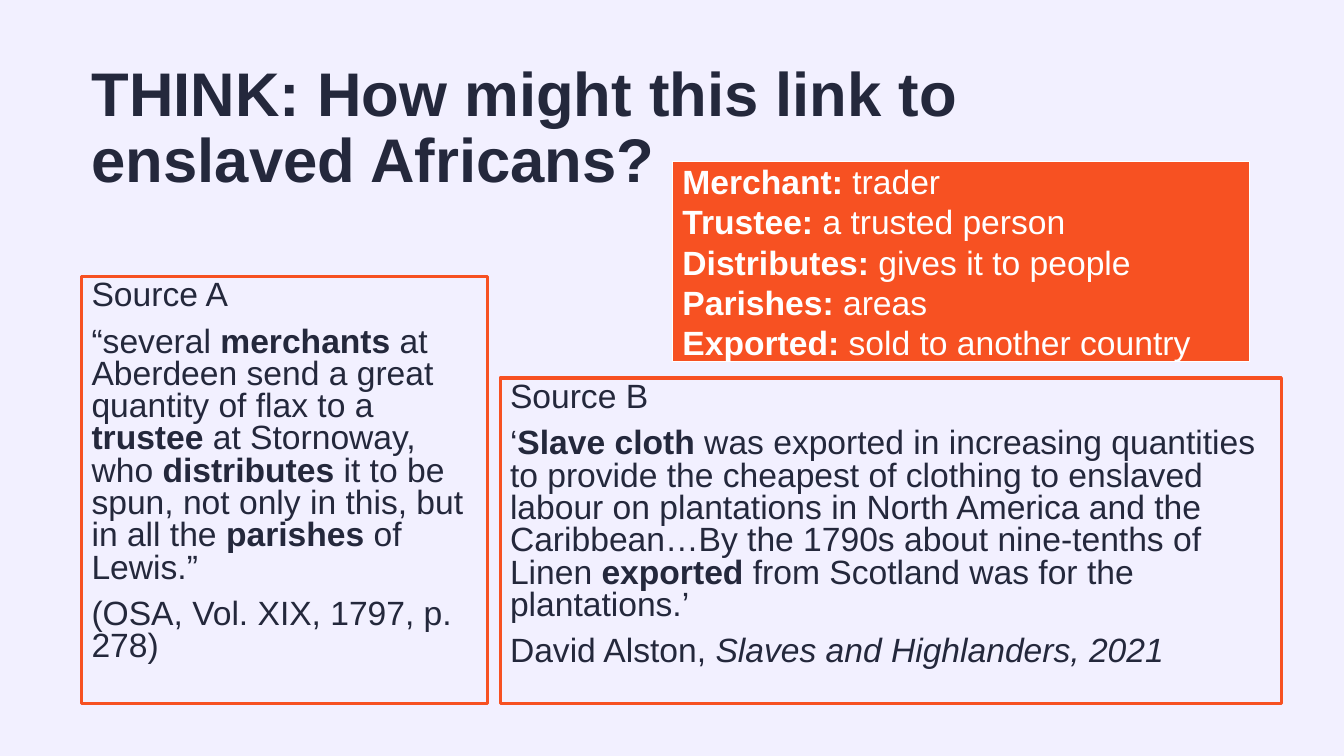
import pptx
import pptx.dml.color
import pptx.enum.shapes
import pptx.enum.text
import pptx.util
from pptx.util import Inches

RGBColor = pptx.dml.color.RGBColor
LAVENDER = RGBColor(0xF2, 0xF0, 0xFF)
NAVY = RGBColor(0x24, 0x28, 0x3C)
ORANGE = RGBColor(0xF7, 0x51, 0x22)
WHITE = RGBColor(0xFF, 0xFF, 0xFF)
MIDDLE = pptx.enum.text.MSO_ANCHOR.MIDDLE
TOP = pptx.enum.text.MSO_ANCHOR.TOP


def write(shape, paragraphs, size=24, color=NAVY, anchor=TOP, inset=0.05,
          spacing=1.0, before=0):
    """Fill a shape with paragraphs, each a list of (text, style); style is "", "b" or "i"."""
    frame = shape.text_frame
    frame.word_wrap = True
    frame.auto_size = pptx.enum.text.MSO_AUTO_SIZE.NONE
    frame.vertical_anchor = anchor
    frame.margin_left = frame.margin_right = Inches(0.1)
    frame.margin_top = frame.margin_bottom = Inches(inset)
    for index, pieces in enumerate(paragraphs):
        paragraph = frame.add_paragraph() if index else frame.paragraphs[0]
        paragraph.alignment = pptx.enum.text.PP_ALIGN.LEFT
        paragraph.line_spacing = spacing
        paragraph.space_before = pptx.util.Pt(before if index else 0)
        for text, style in pieces:
            run = paragraph.add_run()
            run.text = text
            run.font.name = "Arial"
            run.font.size = pptx.util.Pt(size)
            run.font.color.rgb = color
            run.font.bold = style == "b"
            run.font.italic = style == "i"


deck = pptx.Presentation()
deck.slide_width = Inches(13.33)
deck.slide_height = Inches(7.5)
slide = deck.slides.add_slide(deck.slide_layouts[5])
slide.background.fill.solid()
slide.background.fill.fore_color.rgb = LAVENDER

# Title
title = slide.shapes.title
title.left, title.top = Inches(0.81), Inches(0.29)
title.width, title.height = Inches(11.5), Inches(1.99)
write(title, [[("THINK: How might this link to enslaved Africans?", "b")]],
      size=44, anchor=MIDDLE, spacing=0.9)

# Sources
source_a = [
    [("Source A", "")],
    [("“several ", ""), ("merchants", "b"),
     (" at Aberdeen send a great quantity of flax to a ", ""), ("trustee", "b"),
     (" at Stornoway, who ", ""), ("distributes", "b"),
     (" it to be spun, not only in this, but in all the ", ""),
     ("parishes", "b"), (" of Lewis.”", "")],
    [("(OSA, Vol. XIX, 1797, p. 278)", "")],
]
source_b = [
    [("Source B", "")],
    [("‘", ""), ("Slave cloth ", "b"),
     ("was exported in increasing quantities to provide the cheapest of clothing "
      "to enslaved labour on plantations in North America and the Caribbean…"
      "By the 1790s about nine-tenths of Linen ", ""),
     ("exported", "b"), (" from Scotland was for the plantations.’", "")],
    [("David Alston, ", ""), ("Slaves and Highlanders, 2021", "i")],
]
SOURCE_BOTTOM = 6.98
for left, top, width, extract in [(0.81, 2.74, 4.03, source_a),
                                  (4.96, 3.75, 7.75, source_b)]:
    source = slide.shapes.add_textbox(Inches(left), Inches(top), Inches(width),
                                      Inches(SOURCE_BOTTOM - top))
    source.line.color.rgb = ORANGE
    source.line.width = pptx.util.Pt(2.25)
    write(source, extract, spacing=0.8, before=10)

# Glossary
meanings = {
    "Merchant:": "trader",
    "Trustee:": "a trusted person",
    "Distributes:": "gives it to people",
    "Parishes:": "areas",
    "Exported:": "sold to another country",
}
glossary = slide.shapes.add_shape(pptx.enum.shapes.MSO_SHAPE.RECTANGLE, Inches(6.67),
                                  Inches(1.6), Inches(5.72), Inches(1.99))
glossary.shadow.inherit = False
glossary.fill.solid()
glossary.fill.fore_color.rgb = ORANGE
glossary.line.color.rgb = WHITE
glossary.line.width = pptx.util.Pt(0.75)
write(glossary, [[(term, "b"), (f" {meaning}", "")] for term, meaning in meanings.items()],
      color=WHITE, anchor=MIDDLE, inset=0.1)

deck.save("out.pptx")
